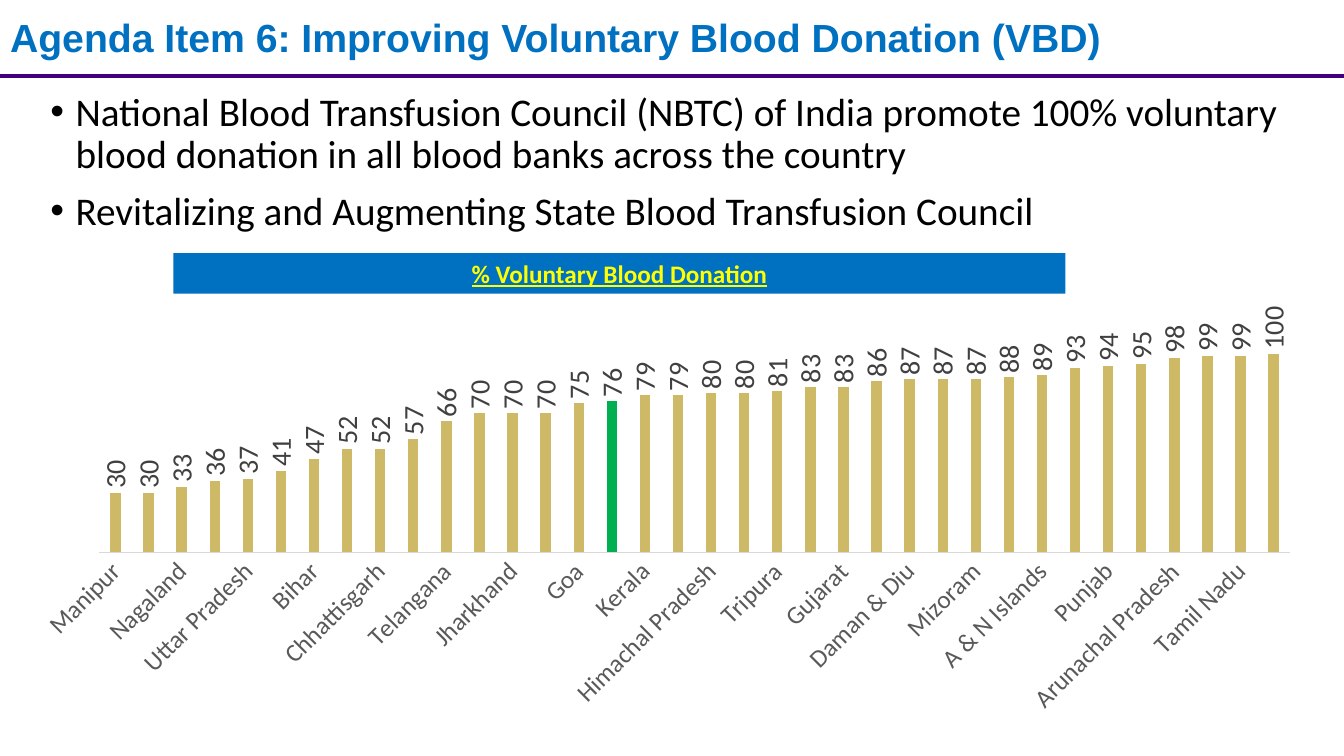
"""Build the voluntary blood donation slide with its state-by-state chart."""
from lxml import etree
from pptx import Presentation
from pptx.chart.data import CategoryChartData
from pptx.dml.color import RGBColor
from pptx.enum import chart as ch, shapes, text
from pptx.oxml import parse_xml
from pptx.oxml.ns import nsdecls, qn
from pptx.util import Cm, Pt

COLORS = {"title": "0070C0", "rule": "410082", "body": "000000", "banner": "0070C0",
          "banner_text": "FFFF00", "bar": "CEB966", "india": "00B050",
          "axis": "D9D9D9", "axis_text": "595959", "label": "404040"}
STATES = [
    ("Manipur", 30), ("Puducherry", 30), ("Nagaland", 33), ("Meghalaya", 36),
    ("Uttar Pradesh", 37), ("Delhi", 41), ("Bihar", 47), ("Assam", 52),
    ("Chhattisgarh", 52), ("Rajasthan", 57), ("Telangana", 66), ("Jammu & Kashmir", 70),
    ("Jharkhand", 70), ("Odisha", 70), ("Goa", 75), ("India", 76),
    ("Kerala", 79), ("Sikkim", 79), ("Himachal Pradesh", 80), ("Uttarakhand", 80),
    ("Tripura", 81), ("Andhra Pradesh", 83), ("Gujarat", 83), ("West Bengal", 86),
    ("Daman & Diu", 87), ("Madhya Pradesh", 87), ("Mizoram", 87), ("Chandigarh", 88),
    ("A & N Islands", 89), ("Haryana", 93), ("Punjab", 94), ("Karnataka", 95),
    ("Arunachal Pradesh", 98), ("Maharashtra", 99), ("Tamil Nadu", 99),
    ("Dadra & Nagar Haveli", 100)]
BULLETS = ["National Blood Transfusion Council (NBTC) of India promote 100% voluntary "
           "blood donation in all blood banks across the country",
           "Revitalizing and Augmenting State Blood Transfusion Council"]


def rgb(name):
    return RGBColor.from_string(COLORS[name])


def style(font, color, **values):
    font.color.rgb = rgb(color)
    for key, value in values.items():
        setattr(font, key, value)


prs = Presentation()
prs.slide_width, prs.slide_height = Cm(33.87), Cm(19.05)
s = prs.slides.add_slide(prs.slide_layouts[5])

rule = s.shapes.add_connector(shapes.MSO_CONNECTOR.STRAIGHT, 0, Cm(1.91), prs.slide_width, Cm(1.91))
rule.line.color.rgb = rgb("rule")
rule.line.width = Pt(3)
etree.SubElement(rule.element.spPr, qn("a:effectLst"))

title = s.shapes.title
title.left, title.top, title.width, title.height = Cm(0), Cm(0.33), Cm(33.58), Cm(1.37)
tf = title.text_frame
tf.auto_size = text.MSO_AUTO_SIZE.NONE
tf.vertical_anchor = text.MSO_ANCHOR.MIDDLE
p = tf.paragraphs[0]
p.alignment = text.PP_ALIGN.LEFT
p.line_spacing = 0.9
r = p.add_run()
r.text = "Agenda Item 6: Improving Voluntary Blood Donation (VBD)"
style(r.font, "title", name="Arial", size=Pt(28), bold=True)

body = s.shapes.add_textbox(Cm(1.02), Cm(2.21), Cm(31.75), Cm(3.86))
tf = body.text_frame
tf.word_wrap = True
for i, bullet in enumerate(BULLETS):
    p = tf.add_paragraph() if i else tf.paragraphs[0]
    p.line_spacing = 0.9
    p.space_before = Pt(10)
    r = p.add_run()
    r.text = bullet
    style(r.font, "body", name="Calibri", size=Pt(28))
    pPr = p._p.get_or_add_pPr()
    pPr.set("marL", str(Cm(0.635)))
    pPr.set("indent", str(-Cm(0.635)))
    etree.SubElement(pPr, qn("a:buFont"), typeface="Arial")
    etree.SubElement(pPr, qn("a:buChar"), char="•")

banner = s.shapes.add_shape(shapes.MSO_SHAPE.RECTANGLE, Cm(4.37), Cm(6.38), Cm(22.48), Cm(1.02))
banner.shadow.inherit = False
banner.fill.solid()
banner.fill.fore_color.rgb = rgb("banner")
banner.line.fill.background()
p = banner.text_frame.paragraphs[0]
p.alignment = text.PP_ALIGN.CENTER
r = p.add_run()
r.text = "% Voluntary Blood Donation"
style(r.font, "banner_text", name="Calibri", size=Pt(18), bold=True, underline=True)

data = CategoryChartData()
data.categories = [state for state, share in STATES]
data.add_series("Series 1", [share for state, share in STATES])
chart = s.shapes.add_chart(ch.XL_CHART_TYPE.COLUMN_CLUSTERED, Cm(0.43), Cm(7.7),
                           Cm(32.74), Cm(10.49), data).chart
chart.has_legend = chart.has_title = False
style(chart.font, "body", name="Calibri", size=Pt(20))

plot = chart.plots[0]
plot.gap_width, plot.overlap, plot.vary_by_categories = 219, -27, False
series = plot.series[0]
india = series.points[[state for state, share in STATES].index("India")]
for bar, color in ((series, "bar"), (india, "india")):
    bar.format.fill.solid()
    bar.format.fill.fore_color.rgb = rgb(color)
labels = series.data_labels
labels.show_value = True
labels.position = ch.XL_LABEL_POSITION.OUTSIDE_END
style(labels.font, "label", name="Calibri", size=Pt(20))

value_axis, state_axis = chart.value_axis, chart.category_axis
value_axis.visible = value_axis.has_major_gridlines = False
value_axis.minimum_scale, value_axis.maximum_scale = 0, 120
state_axis.major_tick_mark = ch.XL_TICK_MARK.NONE
state_axis.format.line.color.rgb = rgb("axis")
state_axis.format.line.width = Pt(0.75)
style(state_axis.tick_labels.font, "axis_text", name="Calibri", size=Pt(18))

space = chart._chartSpace
for parent, angle in (("c:dLbls", -90), ("c:catAx", -45)):
    for frame in space.xpath(f".//{parent}/c:txPr/a:bodyPr"):
        frame.set("rot", str(angle * 60000))
        frame.set("vert", "horz")
space.xpath(".//c:catAx/c:noMultiLvlLbl")[0].addprevious(
    parse_xml(f'<c:tickLblSkip {nsdecls("c")} val="2"/>'))
area = space.xpath(".//c:plotArea")[0]
for layout in area.xpath("./c:layout"):
    area.remove(layout)
edges = {"layoutTarget": "inner", "xMode": "edge", "yMode": "edge",
         "x": 0.063, "y": 0.02, "w": 0.917, "h": 0.573}
manual = "".join(f'<c:{key} val="{value}"/>' for key, value in edges.items())
area.insert(0, parse_xml(
    f'<c:layout {nsdecls("c")}><c:manualLayout>{manual}</c:manualLayout></c:layout>'))

prs.save("out.pptx")
